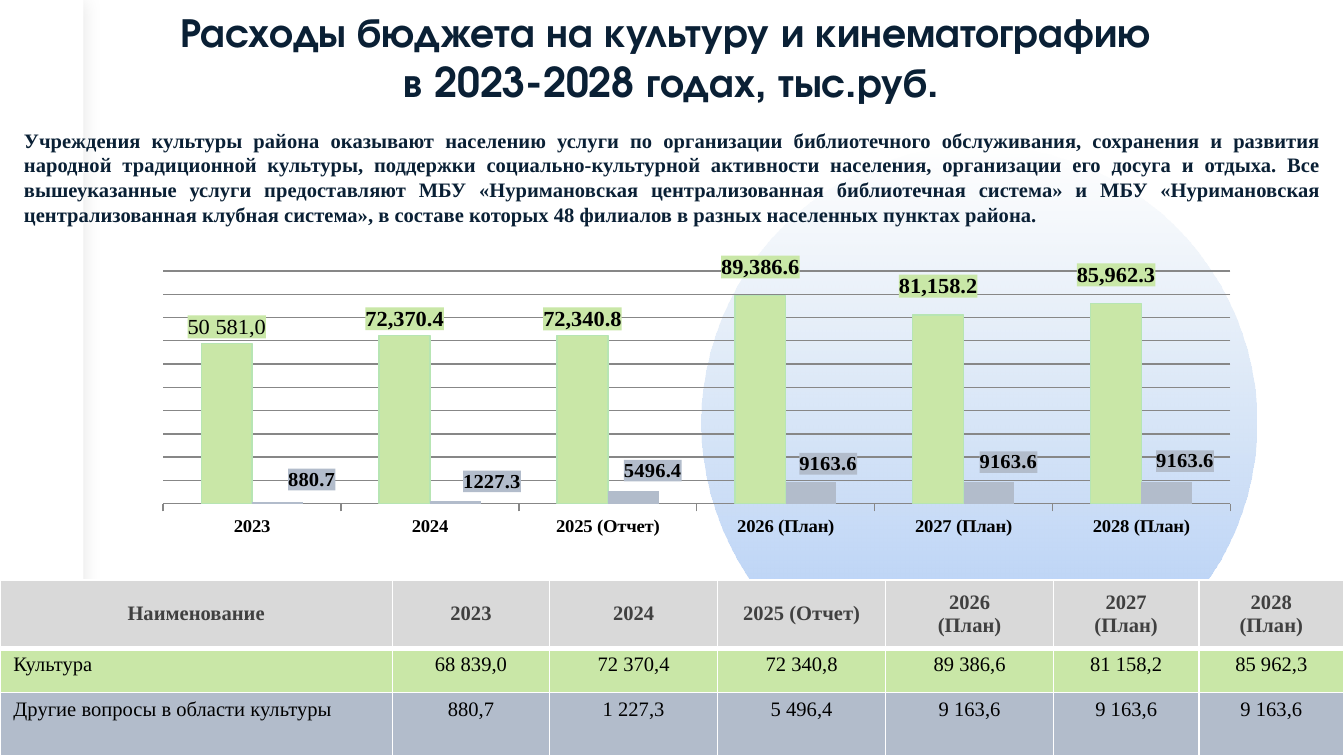
import copy
import lxml.etree
import pptx
import pptx.chart.data
import pptx.dml.color
import pptx.enum.chart
import pptx.enum.shapes
import pptx.enum.text
import pptx.oxml
import pptx.oxml.ns
import pptx.util

RGB = pptx.dml.color.RGBColor
WHITE, BLACK, NAVY = RGB(255, 255, 255), RGB(0, 0, 0), RGB(0x0A, 0x20, 0x35)
GREEN, GREEN_EDGE, STEEL = RGB(0xC9, 0xE7, 0xA7), RGB(0xB7, 0xE5, 0xB3), RGB(0xB2, 0xBC, 0xCB)
HEADER_GRAY, HEADER_TEXT, GRID = RGB(0xD9, 0xD9, 0xD9), RGB(0x40, 0x40, 0x40), RGB(0x87, 0x87, 0x87)
SKY_TOP, SKY_BOTTOM = RGB(0xB4, 0xCC, 0xE7), RGB(0xAC, 0xCB, 0xF9)
SERIF, GEOMETRIC = "Times New Roman", "TeX Gyre Adventor"
ALIGN = pptx.enum.text.PP_ALIGN
ANCHOR = pptx.enum.text.MSO_ANCHOR
SHAPE = pptx.enum.shapes.MSO_SHAPE
qn = pptx.oxml.ns.qn
NS = pptx.oxml.ns.nsdecls("a", "c")

# Widescreen slide, 16 to 9
deck = pptx.Presentation()
deck.slide_width = pptx.util.Inches(10)
deck.slide_height = deck.slide_width * 9 // 16
slide = deck.slides.add_slide(deck.slide_layouts[5])


def share(*percents):
    """Left, top, width, height from percentages of the slide."""
    sides = (deck.slide_width, deck.slide_height) * 2
    return [int(side * percent / 100) for side, percent in zip(sides, percents)]


def set_font(font, color, size, name=SERIF, bold=True):
    for key, value in {"size": pptx.util.Pt(size), "name": name, "bold": bold}.items():
        setattr(font, key, value)
    font.color.rgb = color


# Background: fading circle and left strip
circle = slide.shapes.add_shape(SHAPE.OVAL, *share(52.2, 19.2, 41.3, 73.3))
circle.shadow.inherit = False
circle.line.fill.background()
circle.fill.gradient()
circle.fill.gradient_angle = 270
for stop, color in zip(circle.fill.gradient_stops, (SKY_TOP, SKY_BOTTOM)):
    stop.color.rgb = color
clear_stop = circle._element.spPr.find(".//" + qn("a:srgbClr"))
lxml.etree.SubElement(clear_stop, qn("a:alpha"), val="0")

strip = slide.shapes.add_shape(SHAPE.RECTANGLE, *share(0, 0, 6.2, 100))
strip.shadow.inherit = False
strip.line.fill.background()
strip.fill.solid()
strip.fill.fore_color.rgb = WHITE
strip._element.spPr.find(qn("a:effectLst")).append(pptx.oxml.parse_xml(
    f'<a:outerShdw {NS} blurRad="127000" dist="0"><a:srgbClr val="000000">'
    '<a:alpha val="10000"/></a:srgbClr></a:outerShdw>'))

# Title and introduction
title = slide.shapes.title
slide.shapes._spTree.append(title._element)
title.left, title.top, title.width, title.height = share(0, 0, 99.9, 14.95)
intro = slide.shapes.add_textbox(*share(0.8, 16, 98.5, 14.95))
texts = (
    (title, ["Расходы бюджета на культуру и кинематографию ", "в 2023-2028 годах, тыс.руб."],
     ALIGN.CENTER, 22, GEOMETRIC),
    (intro, ["Учреждения культуры района оказывают населению услуги по организации "
             "библиотечного обслуживания, сохранения и развития народной традиционной культуры, "
             "поддержки социально-культурной активности населения, организации его досуга и отдыха. "
             "Все вышеуказанные услуги предоставляют МБУ «Нуримановская централизованная "
             "библиотечная система» и МБУ «Нуримановская централизованная клубная система», "
             "в составе которых 48 филиалов в разных населенных пунктах района."],
     ALIGN.JUSTIFY, 11, SERIF),
)
for box, lines, alignment, size, face in texts:
    frame = box.text_frame
    frame.text = "\n".join(lines)
    for key, value in {"word_wrap": True, "vertical_anchor": ANCHOR.TOP,
                       "auto_size": pptx.enum.text.MSO_AUTO_SIZE.SHAPE_TO_FIT_TEXT}.items():
        setattr(frame, key, value)
    for paragraph in frame.paragraphs:
        paragraph.alignment = alignment
        set_font(paragraph.runs[0].font, NAVY, size, face)

# Chart of spending by year
spending = pptx.chart.data.CategoryChartData()
spending.categories = ["2023", "2024", "2025 (Отчет)", "2026 (План)", "2027 (План)", "2028 (План)"]
spending.add_series("Series 1", [68839, 72370.4, 72340.8, 89386.6, 81158.2, 85962.3])
spending.add_series("Series 2", [880.7, 1227.3, 5496.4, 9163.6, 9163.6, 9163.6])
chart = slide.shapes.add_chart(pptx.enum.chart.XL_CHART_TYPE.COLUMN_CLUSTERED,
                               *share(0.8, 33.8, 90.8, 37.19), spending).chart
chart.has_legend = chart.has_title = False
set_font(chart.font, BLACK, 18, GEOMETRIC, False)
columns = chart.plots[0]
for key, value in {"gap_width": 150, "overlap": 0, "vary_by_categories": False}.items():
    setattr(columns, key, value)

years, amounts = chart.category_axis, chart.value_axis
set_font(years.tick_labels.font, BLACK, 10)
years.major_tick_mark = pptx.enum.chart.XL_TICK_MARK.OUTSIDE
amounts.tick_labels.number_format = "#,##0.0"
for key, value in {"minimum_scale": 0, "maximum_scale": 100000, "major_unit": 10000,
                   "has_major_gridlines": True, "visible": False}.items():
    setattr(amounts, key, value)
for rule in (years.format.line, amounts.major_gridlines.format.line):
    rule.color.rgb = GRID
    rule.width = pptx.util.Pt(0.75)

plot_area = chart._chartSpace.chart.plotArea
for old_layout in plot_area.findall(qn("c:layout")):
    plot_area.remove(old_layout)
plot_area.insert(0, pptx.oxml.parse_xml(
    f'<c:layout {NS}><c:manualLayout><c:layoutTarget val="inner"/><c:xMode val="edge"/>'
    '<c:yMode val="edge"/><c:x val="0.125"/><c:y val="0.04"/><c:w val="0.875"/><c:h val="0.86"/>'
    '</c:manualLayout></c:layout>'))

# Series colours, labels and label shifts in percent of the chart
OUTSIDE = pptx.enum.chart.XL_LABEL_POSITION.OUTSIDE_END
culture_shifts = {year: (0, -4.5) for year in (3, 4, 5)}
other_shifts = {0: (2.8, -2.3), 1: (3, -1.3), 2: (1.6, -1.6),
                3: (1.4, -1), 4: (1.6, -1.6), 5: (1.5, -2)}
styles = ((GREEN, 12, "#,##0.0", culture_shifts), (STEEL, 11, "0.0", other_shifts))
for series, (color, size, number_format, shifts) in zip(columns.series, styles):
    series.format.fill.solid()
    series.format.fill.fore_color.rgb = color
    labels = series.data_labels
    for key, value in {"show_value": True, "number_format": number_format,
                       "number_format_is_linked": False, "position": OUTSIDE}.items():
        setattr(labels, key, value)
    set_font(labels.font, BLACK, size)
    shared = labels._element
    shared.find(qn("c:txPr")).addprevious(pptx.oxml.parse_xml(
        f'<c:spPr {NS}><a:solidFill><a:srgbClr val="{color}"/></a:solidFill></c:spPr>'))
    # No leader lines between bars and labels
    for leader in shared.findall(qn("c:showLeaderLines")):
        leader.set("val", "0")
    shared.append(pptx.oxml.parse_xml(
        f'<c:extLst {NS}><c:ext uri="{{CE6537A1-D6FC-4f65-9D91-7224C49458BB}}" '
        'xmlns:c15="http://schemas.microsoft.com/office/drawing/2012/chart">'
        '<c15:showLeaderLines val="0"/></c:ext></c:extLst>'))
    for year, (right, down) in shifts.items():
        series.points[year].data_label.position = OUTSIDE
        label = shared.xpath(f"c:dLbl[c:idx/@val={year}]")[0]
        layout = pptx.oxml.parse_xml(
            f'<c:layout {NS}><c:manualLayout><c:x val="{right / 100:.3f}"/>'
            f'<c:y val="{down / 100:.3f}"/></c:manualLayout></c:layout>')
        for old in label.xpath("c:layout|c:numFmt|c:spPr|c:txPr"):
            label.remove(old)
        parts = [layout] + [copy.deepcopy(shared.find(qn(tag)))
                            for tag in ("c:numFmt", "c:spPr", "c:txPr")]
        for place, part in enumerate(parts, 1):
            label.insert(place, part)

culture = columns.series[0]
culture.format.line.color.rgb = GREEN_EDGE
culture.format.line.width = pptx.util.Pt(0.75)
first_label = culture.points[0].data_label
first_label.position = OUTSIDE
first_label.text_frame.text = "50 581,0"
set_font(first_label.text_frame.paragraphs[0].runs[0].font, BLACK, 12, bold=False)
shared = culture.data_labels._element
first = shared.xpath("c:dLbl[c:idx/@val=0]")[0]
for old in first.findall(qn("c:spPr")):
    first.remove(old)
first.find(qn("c:tx")).addnext(copy.deepcopy(shared.find(qn("c:spPr"))))

# Table of the same figures
rows = (
    ["Наименование", "2023", "2024", "2025 (Отчет)", "2026\n(План)", "2027\n(План)", "2028\n(План)"],
    ["Культура", "68 839,0", "72 370,4", "72 340,8", "89 386,6", "81 158,2", "85 962,3"],
    ["Другие вопросы в области культуры", "880,7", "1 227,3", "5 496,4", "9 163,6", "9 163,6", "9 163,6"],
)
row_fills = (HEADER_GRAY, GREEN, STEEL)
table = slide.shapes.add_table(3, 7, *share(0, 76.69, 100, 23.31)).table
for column, percent in zip(table.columns, (29.2, 11.7, 12.5, 12.5, 12.5, 10.8, 10.8)):
    column.width = int(deck.slide_width * percent / 100)
for row, percent in zip(table.rows, (9.07, 5.87, 8.36)):
    row.height = int(deck.slide_height * percent / 100)
for r, (row, fill) in enumerate(zip(rows, row_fills)):
    for c, text in enumerate(row):
        cell = table.cell(r, c)
        cell.text = text
        cell.margin_top = cell.margin_bottom = pptx.util.Inches(0.04)
        cell.vertical_anchor = ANCHOR.TOP if r else ANCHOR.MIDDLE
        for paragraph in cell.text_frame.paragraphs:
            paragraph.alignment = ALIGN.LEFT if r and not c else ALIGN.CENTER
            set_font(paragraph.runs[0].font, BLACK if r else HEADER_TEXT, 11, bold=r == 0)
        borders = {"L": 1, "R": 1, "T": 3 if r == 1 else 1, "B": 1 if r else 3}
        for side, points in borders.items():
            cell._tc.get_or_add_tcPr().append(pptx.oxml.parse_xml(
                f'<a:ln{side} {NS} w="{pptx.util.Pt(points)}"><a:solidFill>'
                f'<a:srgbClr val="{WHITE}"/></a:solidFill></a:ln{side}>'))
        cell.fill.solid()
        cell.fill.fore_color.rgb = fill

deck.save("out.pptx")
